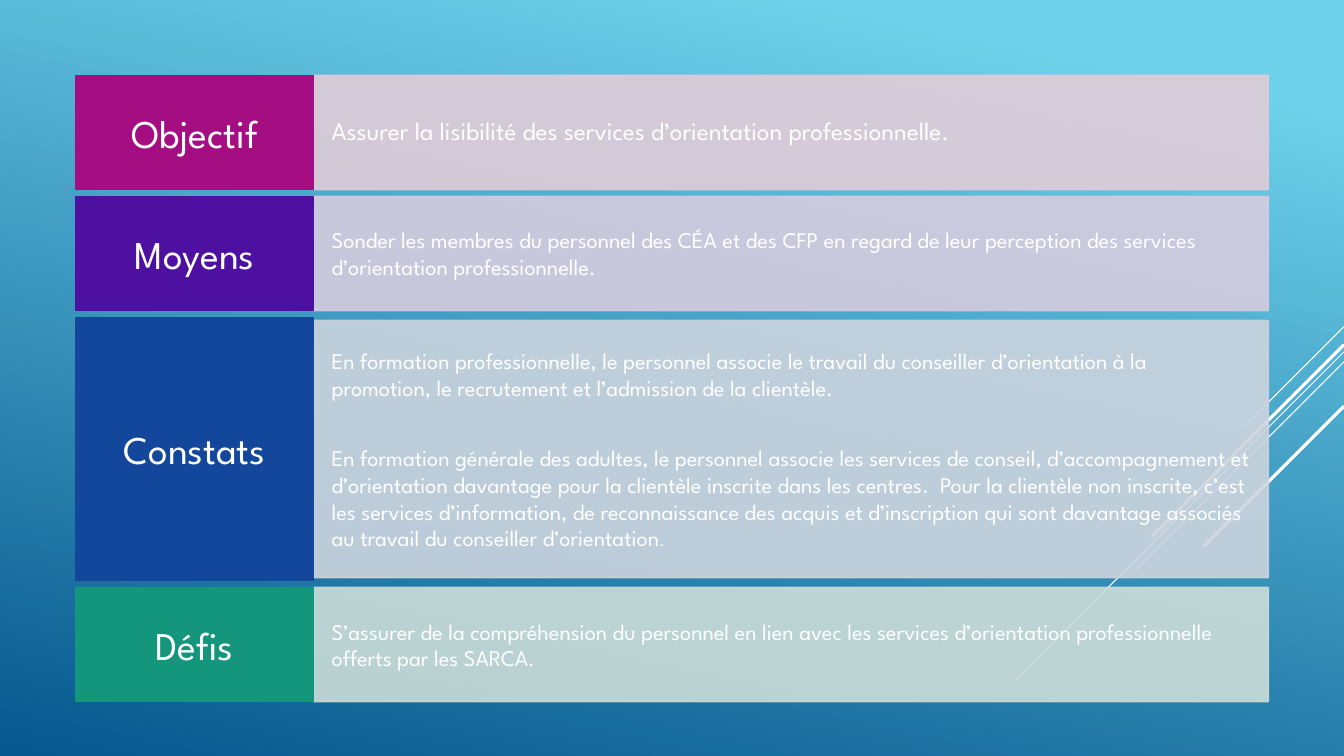
from lxml import etree
from pptx import Presentation
from pptx.dml.color import RGBColor
from pptx.enum.shapes import MSO_CONNECTOR, MSO_SHAPE
from pptx.enum.text import MSO_ANCHOR, PP_ALIGN
from pptx.oxml.ns import qn
from pptx.util import Inches, Pt

RECTANGLE = MSO_SHAPE.RECTANGLE
STRAIGHT = MSO_CONNECTOR.STRAIGHT
MIDDLE = MSO_ANCHOR.MIDDLE
LEFT, CENTER = PP_ALIGN.LEFT, PP_ALIGN.CENTER

THEME = {
    "font": "League Spartan",
    "white": "FFFFFF",
    "sky": ((0.1, "6ED2EB"), (1.0, "06588E")),
    "sky_angle": 258,
    "heading_size": 28,
    "border": 1.25,
    "panel_opacity": 90,
    "paragraph_gap": 31,
}

# Each paragraph is a list of (text, size) runs.
ROWS = [
    {"heading": "Objectif", "dark": "A50E82", "pale": "E1CCD8", "height": 1.13,
     "line_spacing": 0.9, "trim": 0,
     "paragraphs": [[("Assurer la lisibilité des services d’orientation professionnelle.", 18)]]},
    {"heading": "Moyens", "dark": "4D10A0", "pale": "D6CCDF", "height": 1.13,
     "line_spacing": None, "trim": 0,
     "paragraphs": [[("Sonder les membres du personnel des CÉA et des CFP en regard de leur "
                      "perception des services d’orientation professionnelle.", 16)]]},
    {"heading": "Constats", "dark": "12479B", "pale": "CCD4DE", "height": 2.61,
     "line_spacing": None, "trim": 0.03,
     "paragraphs": [
         [("En formation professionnelle, le personnel associe le travail du conseiller "
           "d’orientation à la promotion, le recrutement et l’admission de la clientèle.", 16)],
         [("En formation générale des adultes, le personnel associe les services de conseil, "
           "d’accompagnement et d’orientation davantage pour la clientèle inscrite dans les "
           "centres.  Pour la clientèle non inscrite, c’est les services d’information, de "
           "reconnaissance des acquis et d’inscription qui sont davantage associés au travail "
           "du conseiller d’orientation", 16), (".", 12)]]},
    {"heading": "Défis", "dark": "14967C", "pale": "CCDDD8", "height": 1.13,
     "line_spacing": None, "trim": 0,
     "paragraphs": [[("S’assurer de la compréhension du personnel en lien avec les services "
                      "d’orientation professionnelle offerts par les SARCA", 16), (".", 14)]]},
]

# Diagonal rays: height at the right edge, horizontal run, weight.
RAYS = [(3.24, 1.0, 0.75), (3.49, 3.26, 0.75), (3.59, 2.07, 0.75),
        (3.42, 1.91, 2.25), (4.03, 1.39, 2.25)]

SLIDE_WIDTH, SLIDE_HEIGHT = 13.33, 7.5
MARGIN = 0.75
HEADING_WIDTH, PANEL_WIDTH = 2.36, 9.47
ROW_GAP = 0.07
HEADING_INSETS = (0.13, 0.11)
PANEL_INSETS = (0.18, 0.29)


def rgb(code):
    return RGBColor.from_string(code)


def paint_background(slide):
    fill = slide.background.fill
    fill.gradient()
    fill.gradient_angle = THEME["sky_angle"]
    for stop, (position, color) in zip(fill.gradient_stops, THEME["sky"]):
        stop.position = position
        stop.color.rgb = rgb(color)


def add_ray(slide, top, run, weight):
    ray = slide.shapes.add_connector(
        STRAIGHT, Inches(SLIDE_WIDTH), Inches(top),
        Inches(SLIDE_WIDTH - run), Inches(top + run))
    ray.line.color.rgb = rgb(THEME["white"])
    ray.line.width = Pt(weight)
    etree.SubElement(ray._element.spPr, qn("a:effectLst"))


def add_block(slide, box, color, opacity=100):
    """Add a rectangle whose fill and border share one colour and opacity."""
    block = slide.shapes.add_shape(RECTANGLE, *map(Inches, box))
    block.shadow.inherit = False
    block.fill.solid()
    block.fill.fore_color.rgb = rgb(color)
    block.line.color.rgb = rgb(color)
    block.line.width = Pt(THEME["border"])
    if opacity < 100:
        for tint in block._element.spPr.iter(qn("a:srgbClr")):
            etree.SubElement(tint, qn("a:alpha"), val=str(opacity * 1000))
    return block


def write(block, paragraphs, insets, alignment, line_spacing=None):
    across, down = map(Inches, insets)
    frame = block.text_frame
    frame_format = {"word_wrap": True, "vertical_anchor": MIDDLE,
                    "margin_left": across, "margin_right": across,
                    "margin_top": down, "margin_bottom": down}
    for attribute, value in frame_format.items():
        setattr(frame, attribute, value)
    for index, runs in enumerate(paragraphs):
        paragraph = frame.add_paragraph() if index else frame.paragraphs[0]
        paragraph.alignment = alignment
        paragraph.line_spacing = line_spacing
        if index < len(paragraphs) - 1:
            paragraph.space_after = Pt(THEME["paragraph_gap"])
        for text, size in runs:
            run = paragraph.add_run()
            run.text = text
            run.font.name = THEME["font"]
            run.font.size = Pt(size)
            run.font.color.rgb = rgb(THEME["white"])


def add_row(slide, row, top):
    trim = row["trim"]
    panel_box = (MARGIN + HEADING_WIDTH, top + trim, PANEL_WIDTH, row["height"] - 2 * trim)
    panel = add_block(slide, panel_box, row["pale"], THEME["panel_opacity"])
    write(panel, row["paragraphs"], PANEL_INSETS, LEFT, row["line_spacing"])
    heading = add_block(slide, (MARGIN, top, HEADING_WIDTH, row["height"]), row["dark"])
    write(heading, [[(row["heading"], THEME["heading_size"])]], HEADING_INSETS, CENTER)


def main():
    deck = Presentation()
    deck.slide_width, deck.slide_height = Inches(SLIDE_WIDTH), Inches(SLIDE_HEIGHT)
    slide = deck.slides.add_slide(deck.slide_layouts[6])
    paint_background(slide)
    for ray in RAYS:
        add_ray(slide, *ray)
    top = MARGIN
    for row in ROWS:
        add_row(slide, row, top)
        top += row["height"] + ROW_GAP
    deck.save("out.pptx")


if __name__ == "__main__":
    main()
